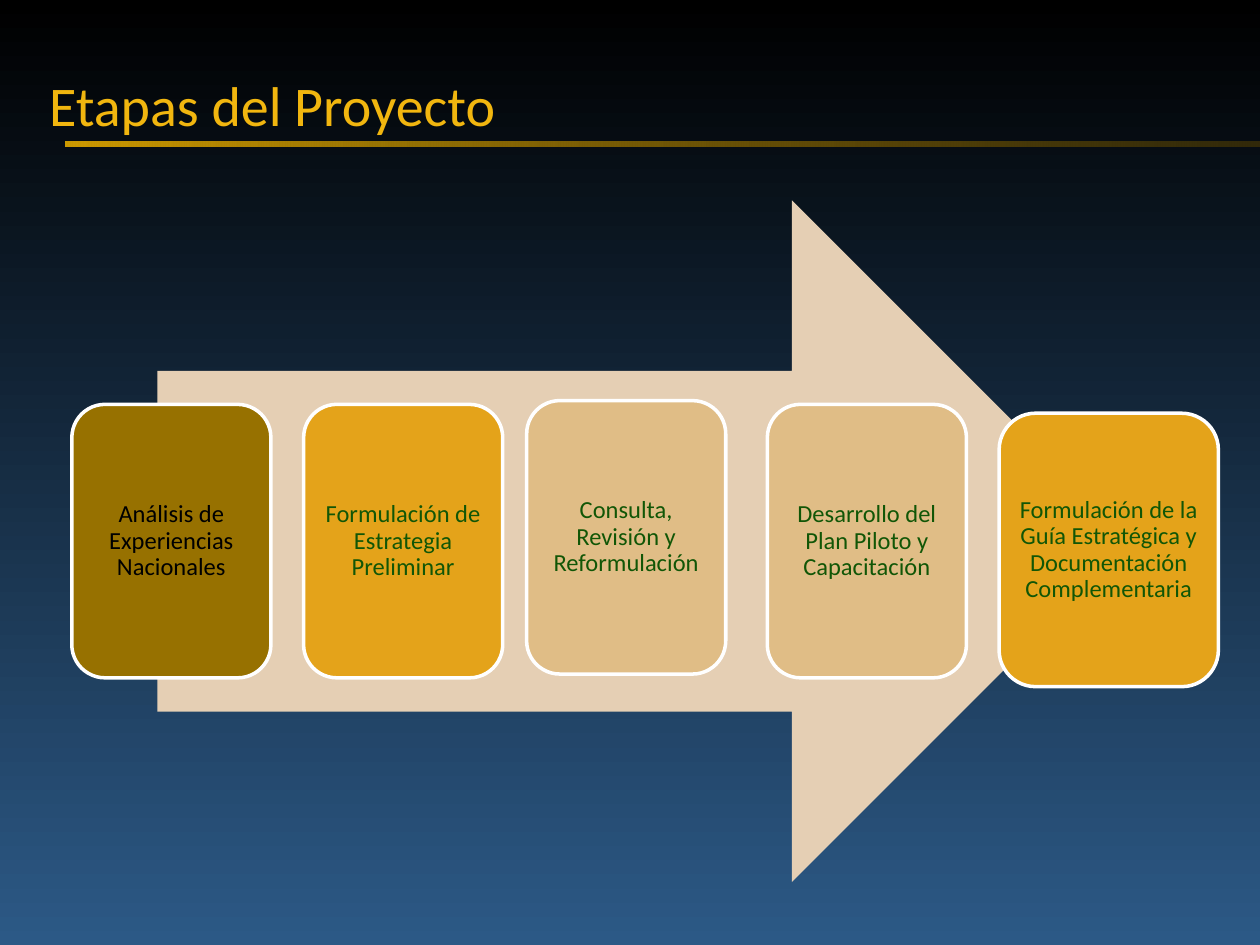
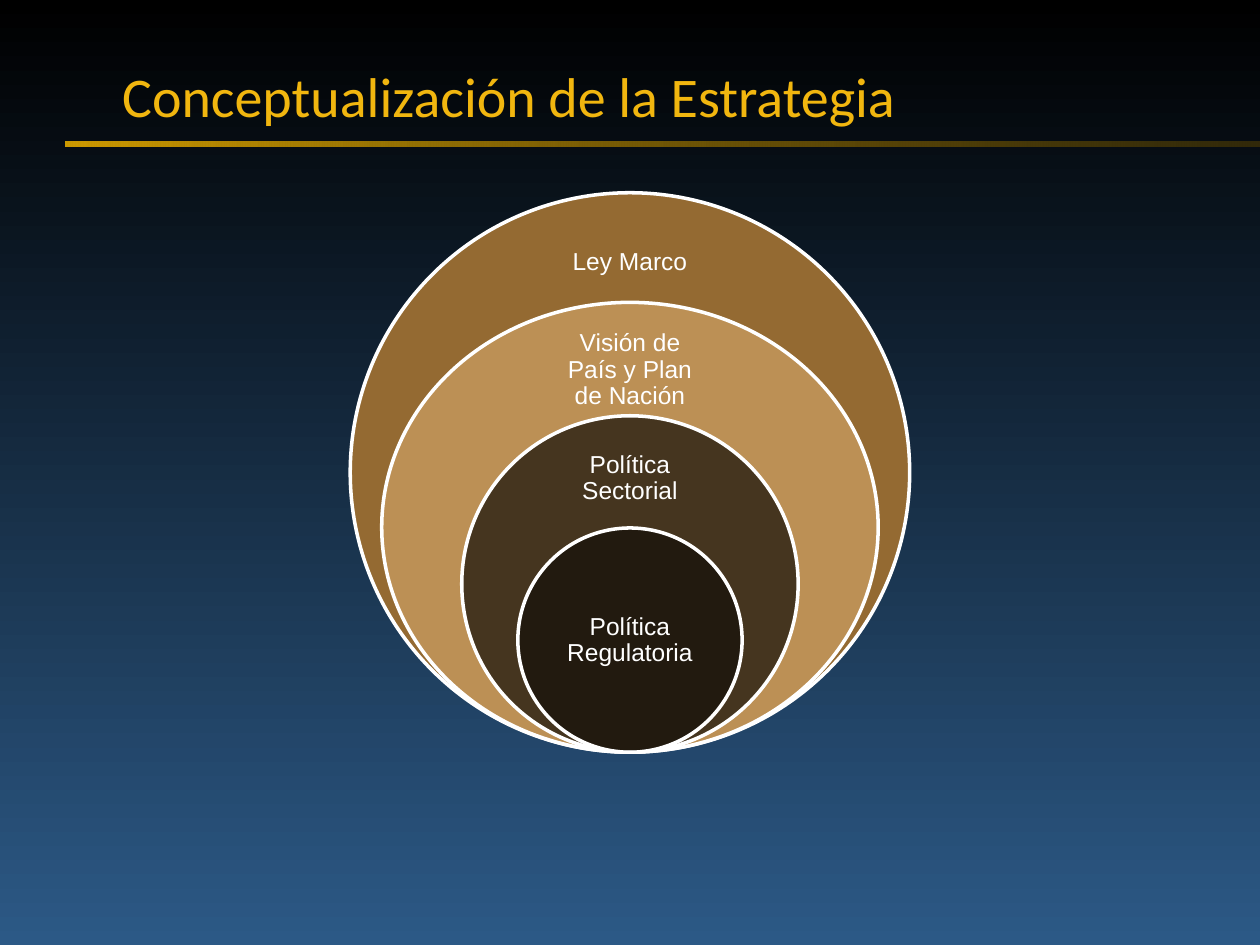
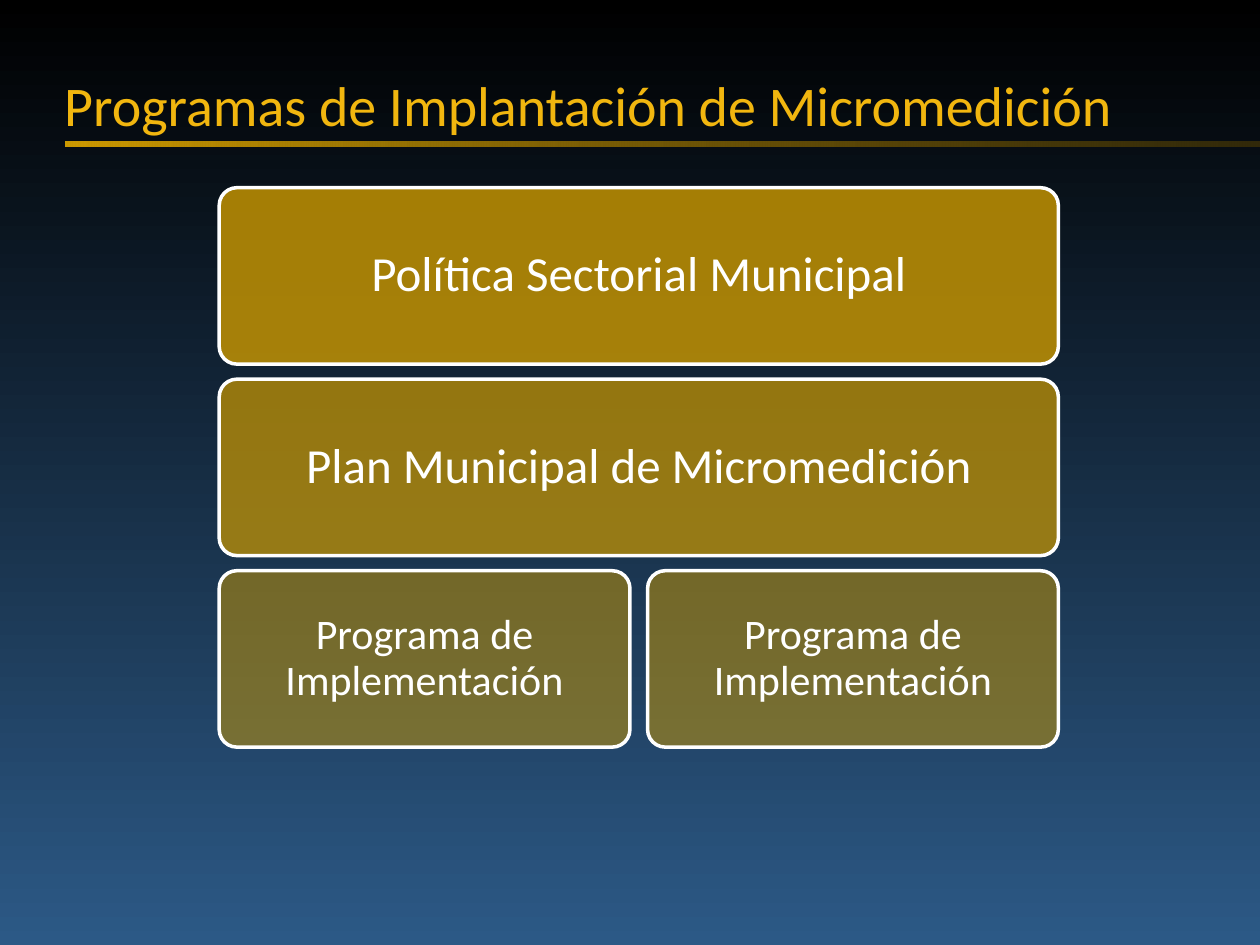
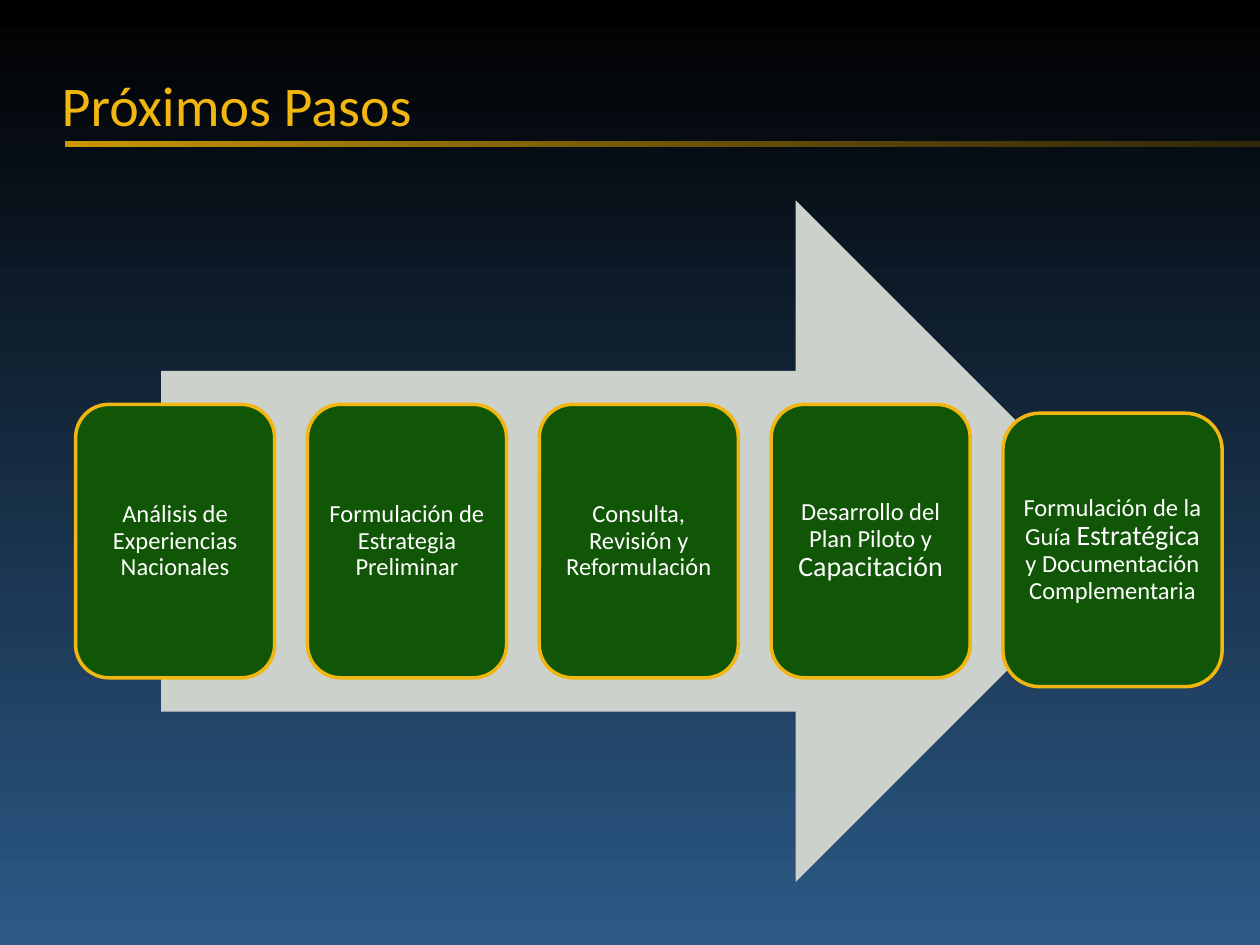
"""Builds four slides on a micrometering strategy: two processes, nested rings and a plan hierarchy."""
from dataclasses import dataclass

from lxml.etree import SubElement
from pptx import Presentation
from pptx.dml.color import RGBColor
from pptx.enum.shapes import MSO_SHAPE
from pptx.enum.text import MSO_ANCHOR, MSO_AUTO_SIZE, PP_ALIGN
from pptx.oxml.ns import qn
from pptx.util import Inches, Pt

SLIDE_WIDTH, SLIDE_HEIGHT = Inches(10), Inches(7.5)
COLUMN = SLIDE_WIDTH // 100
ROW = SLIDE_HEIGHT // 75


@dataclass(frozen=True)
class Theme:
    """Colours, fonts and type sizes of the presentation."""
    night: str = "000000"
    blue: str = "2C5986"
    gold: str = "CC9900"
    dark_gold: str = "5C4500"
    title: str = "F1B60F"
    white: str = "FFFFFF"
    black: str = "000000"
    green: str = "115606"
    olive: str = "977100"
    amber: str = "E4A31A"
    sand: str = "E0BD86"
    pale_sand: str = "E5CFB4"
    pale_gray: str = "CCD1CC"
    brown: str = "946A32"
    tan: str = "C99C60"
    font: str = "Calibri"
    ring_font: str = "Arial"
    title_size: int = 32
    label_size: int = 14
    emphasis_size: int = 16
    plan_size: int = 28
    program_size: int = 24
    outline: int = 2


THEME = Theme()


@dataclass(frozen=True)
class Box:
    """A place on the grid, in columns and rows."""
    left: float
    top: float
    width: float
    height: float

    def lengths(self) -> tuple[int, int, int, int]:
        """Return left, top, width and height as slide lengths."""
        return (round(self.left * COLUMN), round(self.top * ROW),
                round(self.width * COLUMN), round(self.height * ROW))


@dataclass(frozen=True)
class Label:
    """A centred text with its style and an optional larger word."""
    text: str
    color: str = THEME.white
    size: int = THEME.label_size
    font: str = THEME.font
    inset: float = 0.6
    emphasis: str = ""


@dataclass(frozen=True)
class Stage:
    """A process card, with its offset from and excess over the regular grid."""
    label: Label
    fill: str
    shift: float = 0
    drop: float = 0
    extra_width: float = 0


@dataclass(frozen=True)
class Ring:
    """A nested ellipse and the place of its label."""
    text: str
    width: float
    height: float
    fill: str
    opacity: int
    label_top: float
    label_width: float
    label_height: float


@dataclass(frozen=True)
class PlanLevel:
    """A row of equal blocks in the plan hierarchy."""
    labels: tuple[Label, ...]
    opacity: int


TITLE_BOX = Box(3.3, 3.7, 96.7, 9.9)
STAGE_TEXTS = (
    "Análisis de Experiencias Nacionales",
    "Formulación de Estrategia Preliminar",
    "Consulta, Revisión y Reformulación",
    "Desarrollo del Plan Piloto y Capacitación",
    "Formulación de la Guía Estratégica y Documentación Complementaria",
)
STAGE_FILLS = (THEME.olive, THEME.amber, THEME.sand, THEME.sand, THEME.amber)
STAGE_EMPHASES = ("", "", "", "Capacitación", "Estratégica")
LAST_STAGE = {"drop": 0.7, "extra_width": 1.6}
RINGS = (
    Ring("Ley Marco", 44.4, 44.4, THEME.brown, 100, 17.5, 12.4, 6.7),
    Ring("Visión de País y Plan de Nación", 39.4, 35.7, THEME.tan, 77, 26.2, 13.8, 6.4),
    Ring("Política Sectorial", 26.7, 26.7, THEME.black, 63, 35, 12.4, 6),
    Ring("Política Regulatoria", 17.8, 17.8, THEME.black, 50, 46.4, 12.6, 8.9),
)
PROGRAM = Label("Programa de Implementación", size=THEME.program_size, inset=1)
PLAN_LEVELS = (
    PlanLevel((Label("Política Sectorial Municipal", size=THEME.plan_size, inset=1.2),), 80),
    PlanLevel((Label("Plan Municipal de Micromedición", size=THEME.plan_size, inset=1.2),), 70),
    PlanLevel((PROGRAM, PROGRAM), 50),
)


def set_opacity(color_element, percent: int) -> None:
    """Make a colour element partly transparent."""
    SubElement(color_element, qn("a:alpha")).set("val", str(percent * 1000))


def set_gradient(fill, start: str, end: str, angle: int) -> None:
    """Fill with a linear gradient of two colours."""
    fill.gradient()
    fill.gradient_angle = angle
    for stop, color in zip(fill.gradient_stops, (start, end)):
        stop.color.rgb = RGBColor.from_string(color)


def add_filled_shape(slide, preset, box: Box, fill: str, outline: str = "", opacity: int = 100):
    """Add a flat preset shape with an optional outline and transparency."""
    shape = slide.shapes.add_shape(preset, *box.lengths())
    shape.shadow.inherit = False
    shape.fill.solid()
    shape.fill.fore_color.rgb = RGBColor.from_string(fill)
    if opacity < 100:
        set_opacity(shape.element.find(".//" + qn("a:srgbClr")), opacity)
    if outline:
        shape.line.color.rgb = RGBColor.from_string(outline)
        shape.line.width = Pt(THEME.outline)
    else:
        shape.line.fill.background()
    return shape


def style_paragraph(paragraph, font: str, size: int, color: str, spacing: float) -> None:
    """Set the font and line spacing of a paragraph."""
    paragraph.line_spacing = spacing
    paragraph.font.name = font
    paragraph.font.size = Pt(size)
    paragraph.font.color.rgb = RGBColor.from_string(color)


def write_label(shape, label: Label) -> None:
    """Write a centred label into a shape or text box."""
    frame = shape.text_frame
    frame.word_wrap = True
    frame.vertical_anchor = MSO_ANCHOR.MIDDLE
    frame.margin_left = frame.margin_right = round(label.inset * COLUMN)
    frame.margin_top = frame.margin_bottom = round(label.inset * ROW)
    paragraph = frame.paragraphs[0]
    paragraph.alignment = PP_ALIGN.CENTER
    style_paragraph(paragraph, label.font, label.size, label.color, 0.9)
    parts = label.text.partition(label.emphasis) if label.emphasis else (label.text,)
    for part in filter(None, parts):
        run = paragraph.add_run()
        run.text = part
        if part == label.emphasis:
            run.font.size = Pt(THEME.emphasis_size)


def style_layout(presentation, layout) -> None:
    """Give the master its background and the layout its gold rule."""
    set_gradient(presentation.slide_master.background.fill, THEME.night, THEME.blue, 270)
    slide = presentation.slides[0]
    rule = add_filled_shape(slide, MSO_SHAPE.RECTANGLE, Box(5.2, 11.2, 94.8, 0.45), THEME.gold)
    set_gradient(rule.fill, THEME.gold, THEME.dark_gold, 0)
    set_opacity(rule.element.findall(".//" + qn("a:srgbClr"))[1], 50)
    layout.shapes.element.append(rule.element)


def add_titled_slide(presentation, layout, title: str, indent: float, box: Box = TITLE_BOX):
    """Add a slide and format its title placeholder."""
    slide = presentation.slides.add_slide(layout)
    placeholder = slide.shapes.title
    placeholder.left, placeholder.top, placeholder.width, placeholder.height = box.lengths()
    frame = placeholder.text_frame
    frame.text = title
    frame.word_wrap = True
    frame.auto_size = MSO_AUTO_SIZE.NONE
    frame.vertical_anchor = MSO_ANCHOR.MIDDLE
    frame.margin_left = round(indent * COLUMN)
    paragraph = frame.paragraphs[0]
    paragraph.alignment = PP_ALIGN.LEFT
    style_paragraph(paragraph, THEME.font, THEME.title_size, THEME.title, 0.85)
    return slide


def draw_process(slide, left: float, arrow_fill: str, outline: str, stages: list[Stage]) -> None:
    """Draw a wide arrow with a row of stage cards over it."""
    add_filled_shape(slide, MSO_SHAPE.RIGHT_ARROW, Box(left + 6.8, 15.9, 77.4, 54.1), arrow_fill)
    for index, stage in enumerate(stages):
        box = Box(left + index * 18.4 + stage.shift, 32.1 + stage.drop,
                  15.8 + stage.extra_width, 21.7)
        card = add_filled_shape(slide, MSO_SHAPE.ROUNDED_RECTANGLE, box, stage.fill, outline)
        write_label(card, stage.label)


def draw_rings(slide, rings: tuple[Ring, ...]) -> None:
    """Draw ellipses that share a centre line and a lowest point."""
    center, bottom = 50, 59.7
    for ring in rings:
        box = Box(center - ring.width / 2, bottom - ring.height, ring.width, ring.height)
        add_filled_shape(slide, MSO_SHAPE.OVAL, box, ring.fill, THEME.white, ring.opacity)
        label_box = Box(center - ring.label_width / 2, ring.label_top,
                        ring.label_width, ring.label_height)
        write_label(slide.shapes.add_textbox(*label_box.lengths()),
                    Label(ring.text, font=THEME.ring_font, inset=1.1))


def draw_plan(slide, levels: tuple[PlanLevel, ...]) -> None:
    """Draw the levels of the plan as rows of equal blocks."""
    left, top, width, height = 17.4, 14.9, 66.6, 14
    column_gap, row_gap = 1.4, 1.2
    for row, level in enumerate(levels):
        count = len(level.labels)
        block_width = (width - (count - 1) * column_gap) / count
        for column, label in enumerate(level.labels):
            box = Box(left + column * (block_width + column_gap),
                      top + row * (height + row_gap), block_width, height)
            block = add_filled_shape(slide, MSO_SHAPE.ROUNDED_RECTANGLE, box,
                                     THEME.gold, THEME.white, level.opacity)
            block.adjustments[0] = 0.1
            write_label(block, label)


def project_stages() -> list[Stage]:
    """Return the stages of the project in earth colours."""
    offsets = ({}, {}, {"shift": -0.7, "drop": -0.3}, {}, LAST_STAGE)
    return [Stage(Label(text, THEME.green if index else THEME.black), fill, **offset)
            for index, (text, fill, offset) in enumerate(zip(STAGE_TEXTS, STAGE_FILLS, offsets))]


def next_stages() -> list[Stage]:
    """Return the same stages in green, with their larger words."""
    offsets = ({}, {}, {}, {}, LAST_STAGE)
    return [Stage(Label(text, emphasis=emphasis), THEME.green, **offset)
            for text, emphasis, offset in zip(STAGE_TEXTS, STAGE_EMPHASES, offsets)]


def main() -> None:
    """Build and save the presentation."""
    presentation = Presentation()
    presentation.slide_width, presentation.slide_height = SLIDE_WIDTH, SLIDE_HEIGHT
    layout = presentation.slide_layouts.get_by_name("Title Only")

    stages_slide = add_titled_slide(presentation, layout, "Etapas del Proyecto", 0.6)
    style_layout(presentation, layout)
    draw_process(stages_slide, 5.7, THEME.pale_sand, THEME.white, project_stages())

    strategy_slide = add_titled_slide(presentation, layout, "Conceptualización de la Estrategia",
                                      6.8, Box(2.9, 1.7, 96.1, 12.5))
    draw_rings(strategy_slide, RINGS)

    plan_slide = add_titled_slide(presentation, layout,
                                  "Programas de Implantación de Micromedición", 1.8)
    draw_plan(plan_slide, PLAN_LEVELS)

    next_slide = add_titled_slide(presentation, layout, "Próximos Pasos", 1.6)
    draw_process(next_slide, 6, THEME.pale_gray, THEME.title, next_stages())

    presentation.save("out.pptx")


if __name__ == "__main__":
    main()
